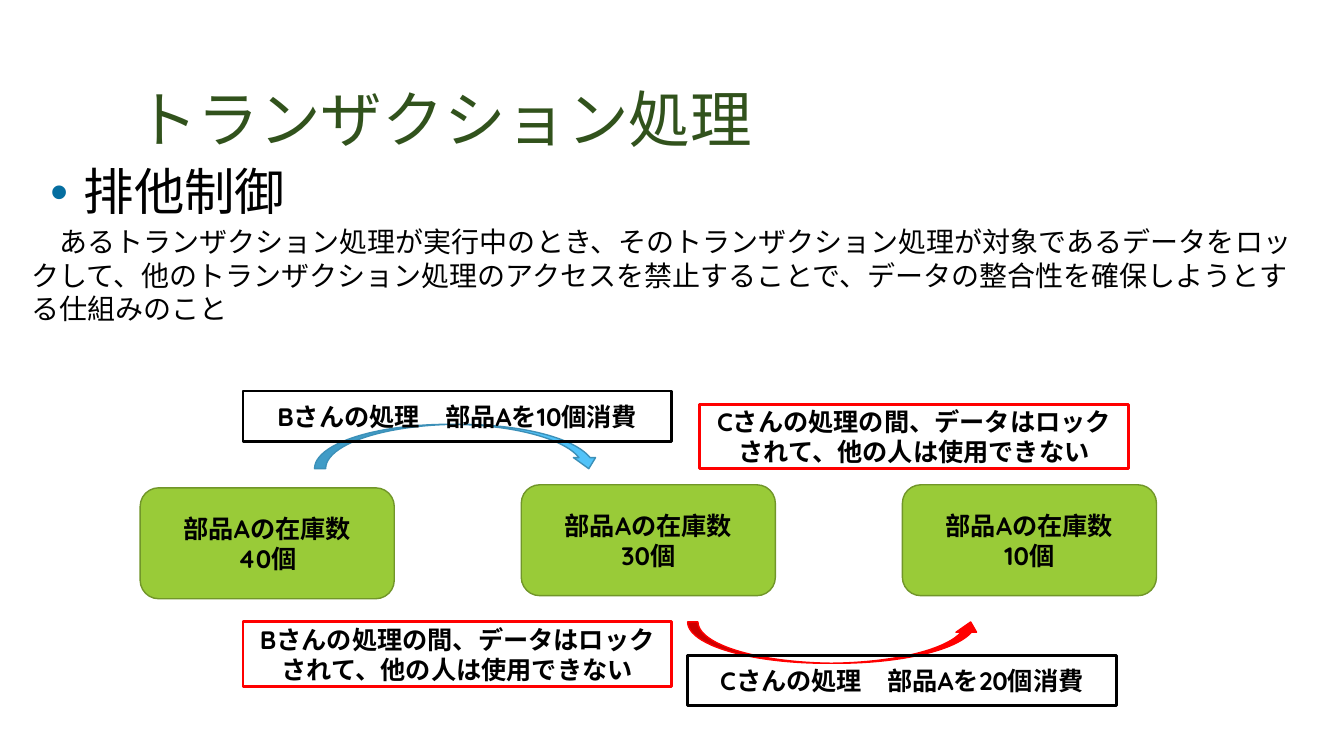
from dataclasses import dataclass
from typing import Optional

from lxml.etree import SubElement
from pptx import Presentation
from pptx.dml.color import RGBColor
from pptx.enum.shapes import MSO_SHAPE as Shape
from pptx.enum.text import MSO_ANCHOR as Anchor, PP_ALIGN as Align
from pptx.oxml.ns import qn
from pptx.util import Inches, Pt

BLACK = RGBColor(0x00, 0x00, 0x00)
RED = RGBColor(0xFF, 0x00, 0x00)
FOREST = RGBColor(0x31, 0x52, 0x1C)
GREEN = RGBColor(0x99, 0xCB, 0x38)
OLIVE = RGBColor(0x71, 0x96, 0x29)
SKY = RGBColor(0x51, 0xC3, 0xF9)
STEEL = RGBColor(0x3C, 0x90, 0xB8)
BULLET = "056EA0"
CJK = "Noto Sans CJK JP"
LATIN = "Quicksand"


@dataclass
class Style:
    size: int
    font: str = LATIN
    color: RGBColor = BLACK
    bold: bool = False


@dataclass
class Item:
    kind: Shape
    left: float
    top: float
    width: float
    height: float
    line: RGBColor
    weight: float = 1
    fill: Optional[RGBColor] = None
    text: str = ""


LABEL = Style(18, bold=True)


def stock(left: float, top: float, count: int) -> Item:
    return Item(Shape.ROUNDED_RECTANGLE, left, top, 2.52, 1.1, OLIVE,
                fill=GREEN, text=f"部品Aの在庫数\n{count}個")


def task(left: float, top: float, who: str, count: int) -> Item:
    return Item(Shape.RECTANGLE, left, top, 4.25, 0.5, BLACK, 2,
                text=f"{who}さんの処理\u3000部品Aを{count}個消費".replace("\u3000", "　"))


def lock(left: float, top: float, who: str) -> Item:
    return Item(Shape.RECTANGLE, left, top, 4.25, 0.64, RED, 2,
                text=f"{who}さんの処理の間、データはロックされて、他の人は使用できない")


ITEMS = [
    stock(1.39, 4.84, 40),
    stock(5.17, 4.81, 30),
    Item(Shape.CURVED_DOWN_ARROW, 3.12, 4.21, 2.83, 0.44, STEEL, fill=SKY),
    task(2.41, 3.88, "B", 10),
    lock(2.41, 6.17, "B"),
    stock(8.95, 4.81, 10),
    Item(Shape.CURVED_UP_ARROW, 6.82, 6.17, 2.91, 0.41, RED, fill=RED),
    task(6.82, 6.5, "C", 20),
    lock(6.94, 4.01, "C"),
]


def write(frame, text: str, style: Style) -> None:
    frame.word_wrap = True
    frame.text = text
    for para in frame.paragraphs:
        for run in para.runs:
            font = run.font
            font.size = Pt(style.size)
            font.name = style.font
            font.bold = style.bold
            font.color.rgb = style.color
            SubElement(run._r.rPr, qn("a:ea"), typeface=style.font)


def add_text(slide, box: tuple, text: str, style: Style):
    frame = slide.shapes.add_textbox(*map(Inches, box)).text_frame
    write(frame, text, style)
    return frame


def pad(frame) -> None:
    frame.margin_left = frame.margin_right = Inches(0.13)
    frame.margin_top = frame.margin_bottom = Inches(0.07)


def add_bullet(para) -> None:
    props = para._p.get_or_add_pPr()
    props.set("marL", str(Inches(0.33)))
    props.set("indent", str(-Inches(0.33)))
    color = SubElement(props, qn("a:buClr"))
    SubElement(color, qn("a:srgbClr"), val=BULLET)
    SubElement(props, qn("a:buFont"), typeface="Arial")
    SubElement(props, qn("a:buChar"), char="•")


def add_item(slide, item: Item) -> None:
    box = map(Inches, (item.left, item.top, item.width, item.height))
    shape = slide.shapes.add_shape(item.kind, *box)
    shape.shadow.inherit = False
    shape.line.color.rgb = item.line
    shape.line.width = Pt(item.weight)
    if item.fill is None:
        shape.fill.background()
    else:
        shape.fill.solid()
        shape.fill.fore_color.rgb = item.fill
    if item.text:
        frame = shape.text_frame
        write(frame, item.text, LABEL)
        frame.vertical_anchor = Anchor.MIDDLE
        for para in frame.paragraphs:
            para.alignment = Align.CENTER


def main() -> None:
    deck = Presentation()
    deck.slide_width, deck.slide_height = Inches(13.33), Inches(7.5)
    slide = deck.slides.add_slide(deck.slide_layouts[6])

    title = add_text(slide, (1.22, 0.08, 11.11, 1.53), "トランザクション処理",
                     Style(44, CJK, FOREST))
    pad(title)
    title.vertical_anchor = Anchor.BOTTOM
    title.paragraphs[0].line_spacing = 0.85

    topic = add_text(slide, (0.37, 1.56, 12.6, 5.65), "排他制御", Style(36, CJK))
    pad(topic)
    head = topic.paragraphs[0]
    head.line_spacing = 0.95
    head.space_before = Pt(18.7)
    add_bullet(head)

    add_text(slide, (0.21, 2.18, 12.91, 1.45),
             "　あるトランザクション処理が実行中のとき、そのトランザクション処理が"
             "対象であるデータをロックして、他のトランザクション処理のアクセスを"
             "禁止することで、データの整合性を確保しようとする仕組みのこと",
             Style(20))

    for item in ITEMS:
        add_item(slide, item)
    deck.save("out.pptx")


if __name__ == "__main__":
    main()
